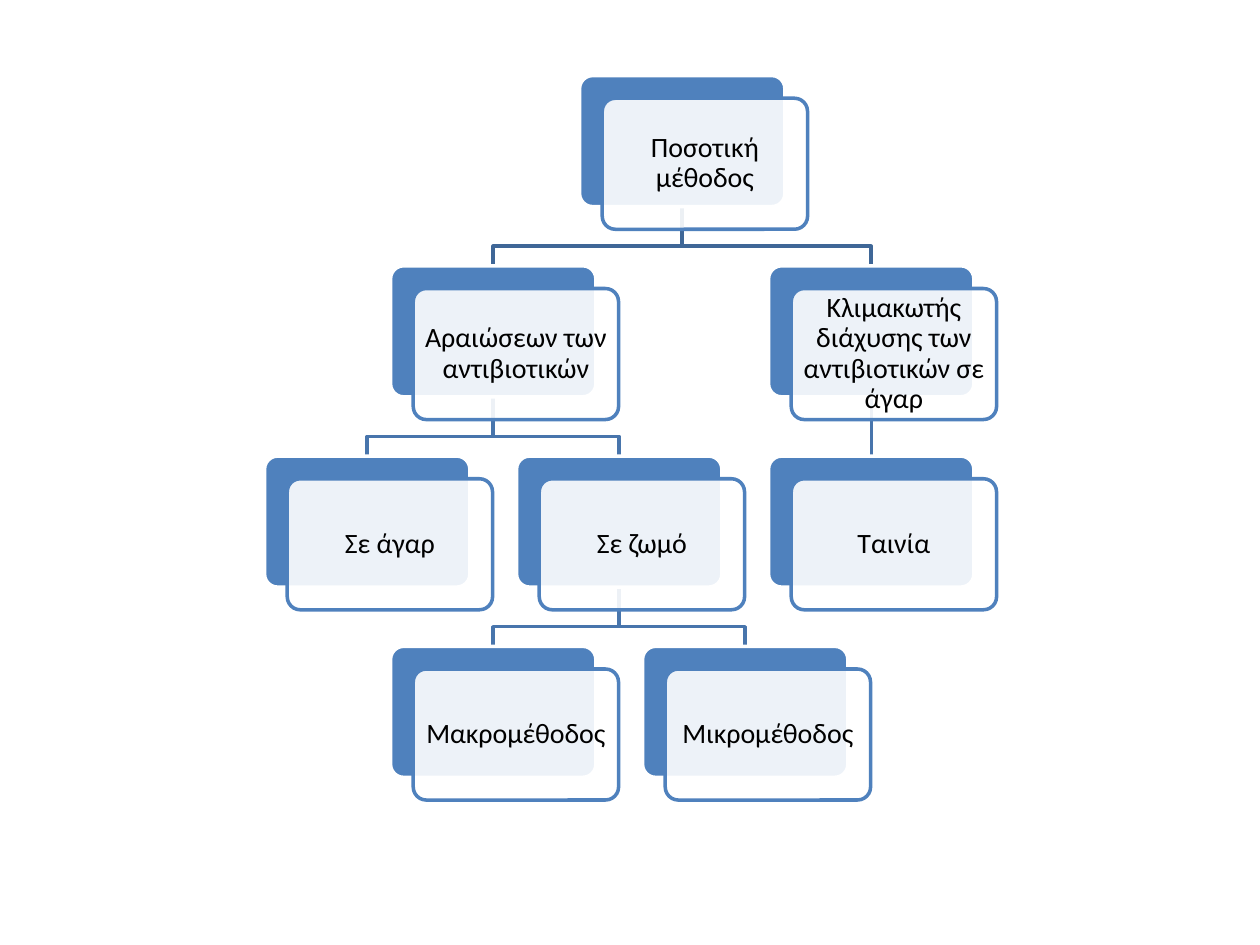
from lxml.etree import SubElement
from pptx import Presentation
from pptx.dml.color import RGBColor
from pptx.enum.shapes import MSO_CONNECTOR as Line, MSO_SHAPE as Shape
from pptx.enum.text import MSO_ANCHOR as Anchor, PP_ALIGN as Align
from pptx.oxml.ns import qn
from pptx.util import Inches, Pt

COLORS = {"blue": "4F81BD", "white": "FFFFFF", "text": "000000",
          "top link": "3F6797", "lower link": "4875AC"}

# Grid: a column is half the distance between neighbouring cards
LEFT, TOP = Inches(2.1), Inches(0.6)
COL, ROW = Inches(0.5), Inches(1.51)
CARD_W, CARD_H = Inches(1.63), Inches(1.04)
SHIFT = Inches(0.18)
BEND = 0.67  # share of the gap between two rows

# Method: column, row, parent
METHODS = {
    "Ποσοτική μέθοδος": (5, 0, None),
    "Αραιώσεων των αντιβιοτικών": (2, 1, "Ποσοτική μέθοδος"),
    "Σε άγαρ": (0, 2, "Αραιώσεων των αντιβιοτικών"),
    "Σε ζωμό": (4, 2, "Αραιώσεων των αντιβιοτικών"),
    "Μακρομέθοδος": (2, 3, "Σε ζωμό"),
    "Μικρομέθοδος": (6, 3, "Σε ζωμό"),
    "Κλιμακωτής διάχυσης των αντιβιοτικών σε άγαρ": (8, 1, "Ποσοτική μέθοδος"),
    "Ταινία": (8, 2, "Κλιμακωτής διάχυσης των αντιβιοτικών σε άγαρ"),
}


def color(name):
    return RGBColor.from_string(COLORS[name])


def add_card(left, top, fill, line):
    card = slide.shapes.add_shape(Shape.ROUNDED_RECTANGLE, left, top, CARD_W, CARD_H)
    card.adjustments[0] = 0.1
    card.shadow.inherit = False
    card.fill.solid()
    card.fill.fore_color.rgb = color(fill)
    card.line.color.rgb = color(line)
    card.line.width = Pt(2)
    return card


prs = Presentation()
prs.slide_width, prs.slide_height = Inches(10), Inches(7.5)
slide = prs.slides.add_slide(prs.slide_layouts[6])

# Cards: a solid back and a translucent front that holds the text
backs = {}
for method, (col, row, parent) in METHODS.items():
    left, top = LEFT + col * COL, TOP + row * ROW
    backs[method] = add_card(left, top, "blue", "white")
    front = add_card(left + SHIFT, top + SHIFT, "white", "blue")
    tint = front.fill._xPr.find(qn("a:solidFill"))[0]
    SubElement(tint, qn("a:alpha"), val="90000")

    frame = front.text_frame
    frame.word_wrap = True
    frame.vertical_anchor = Anchor.MIDDLE
    frame.margin_left = frame.margin_right = Inches(0.04)
    frame.margin_top = frame.margin_bottom = Inches(0.04)
    label = frame.paragraphs[0]
    label.text = method
    label.alignment = Align.CENTER
    label.line_spacing = 0.9
    label.space_after = Pt(5.6)
    label.font.name = "Calibri"
    label.font.size = Pt(16)
    label.font.color.rgb = color("text")

# Links from parent to child, placed behind the cards
for method, (col, row, parent) in METHODS.items():
    if parent is None:
        continue
    upper, lower = backs[parent], backs[method]
    start_x, end_x = (card.left + CARD_W // 2 for card in (upper, lower))
    start_y, end_y = upper.top + CARD_H, lower.top
    if start_x == end_x:
        link = slide.shapes.add_connector(Line.STRAIGHT, start_x, start_y, end_x, end_y)
        link.begin_connect(upper, 2)
        link.end_connect(lower, 0)
        SubElement(link._element.spPr, qn("a:effectLst"))
    else:
        bend_y = start_y + int(BEND * (end_y - start_y))
        route = slide.shapes.build_freeform(start_x, start_y)
        route.add_line_segments(
            [(start_x, bend_y), (end_x, bend_y), (end_x, end_y)], close=False)
        link = route.convert_to_shape()
        link.fill.background()
        link.shadow.inherit = False
    link.line.color.rgb = color("top link" if row == 1 else "lower link")
    link.line.width = Pt(2)
    slide.shapes._spTree.insert(2, link._element)

prs.save("out.pptx")
